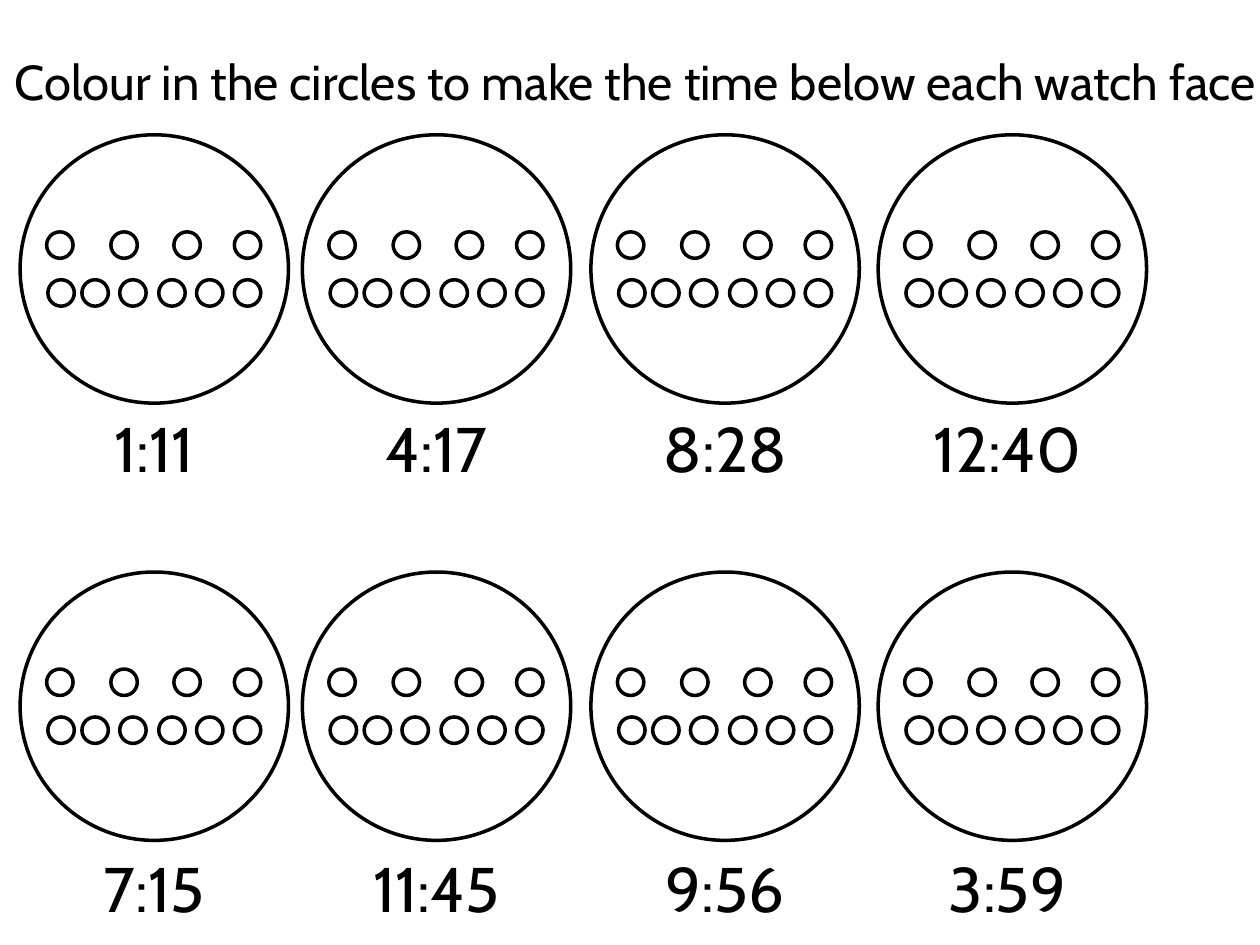
from dataclasses import dataclass

from pptx import Presentation
from pptx.dml.color import RGBColor
from pptx.enum.shapes import MSO_SHAPE
from pptx.enum.text import MSO_AUTO_SIZE as AutoSize, PP_ALIGN as Align
from pptx.slide import Slide
from pptx.util import Emu, Pt

PX = 9144  # 100 px to the inch
COLOURS = {"ink": "000000"}
FONT = "Cabin"

FACE_SIZE = 213
LIGHT_SIZE = 21
CAPTION_HEIGHT = 71


@dataclass(frozen=True)
class LightRow:
    """Lights in one line of a watch, measured from the corner of its face."""
    top: int
    lefts: tuple[int, ...]


@dataclass(frozen=True)
class Column:
    face_left: int
    caption_left: int


@dataclass(frozen=True)
class WatchRow:
    face_top: int
    caption_top: int
    times: tuple[str, ...]


HOURS = LightRow(77, (21, 72, 122, 170))
MINUTES = LightRow(115, (22, 49, 79, 110, 140, 170))
COLUMNS = (Column(16, 16), Column(240, 240), Column(469, 469), Column(697, 693))
WATCH_ROWS = (
    WatchRow(107, 320, ("1:11", "4:17", "8:28", "12:40")),
    WatchRow(454, 669, ("7:15", "11:45", "9:56", "3:59")),
)


def px(length: int) -> Emu:
    return Emu(length * PX)


def colour(name: str) -> RGBColor:
    return RGBColor.from_string(COLOURS[name])


def draw_circle(slide: Slide, left: int, top: int, size: int) -> None:
    circle = slide.shapes.add_shape(
        MSO_SHAPE.OVAL, px(left), px(top), px(size), px(size))
    circle.shadow.inherit = False
    circle.fill.background()
    circle.line.color.rgb = colour("ink")
    circle.line.width = Pt(2)


def draw_text(slide: Slide, text: str, left: int, top: int, width: int, height: int,
              size: int, align: Align, wrap: bool) -> None:
    box = slide.shapes.add_textbox(px(left), px(top), px(width), px(height))
    frame = box.text_frame
    frame.word_wrap = wrap
    frame.auto_size = AutoSize.SHAPE_TO_FIT_TEXT
    paragraph = frame.paragraphs[0]
    paragraph.text = text
    paragraph.alignment = align
    paragraph.font.name = FONT
    paragraph.font.size = Pt(size)
    paragraph.font.color.rgb = colour("ink")


def draw_watch(slide: Slide, left: int, top: int) -> None:
    draw_circle(slide, left, top, FACE_SIZE)
    for lights in (HOURS, MINUTES):
        for light_left in lights.lefts:
            draw_circle(slide, left + light_left, top + lights.top, LIGHT_SIZE)


def main() -> None:
    presentation = Presentation()
    presentation.slide_width = px(1000)
    presentation.slide_height = px(750)
    slide = presentation.slides.add_slide(presentation.slide_layouts[6])

    # Instruction
    draw_text(slide, "Colour in the circles to make the time below each watch face",
              2, 36, 1006, 57, size=28, align=Align.LEFT, wrap=False)

    # Watches
    for row in WATCH_ROWS:
        for column in COLUMNS:
            draw_watch(slide, column.face_left, row.face_top)

    # Times to show
    for row in WATCH_ROWS:
        for column, time in zip(COLUMNS, row.times):
            draw_text(slide, time, column.caption_left, row.caption_top,
                      FACE_SIZE, CAPTION_HEIGHT, size=36, align=Align.CENTER, wrap=True)

    presentation.save("out.pptx")


if __name__ == "__main__":
    main()
